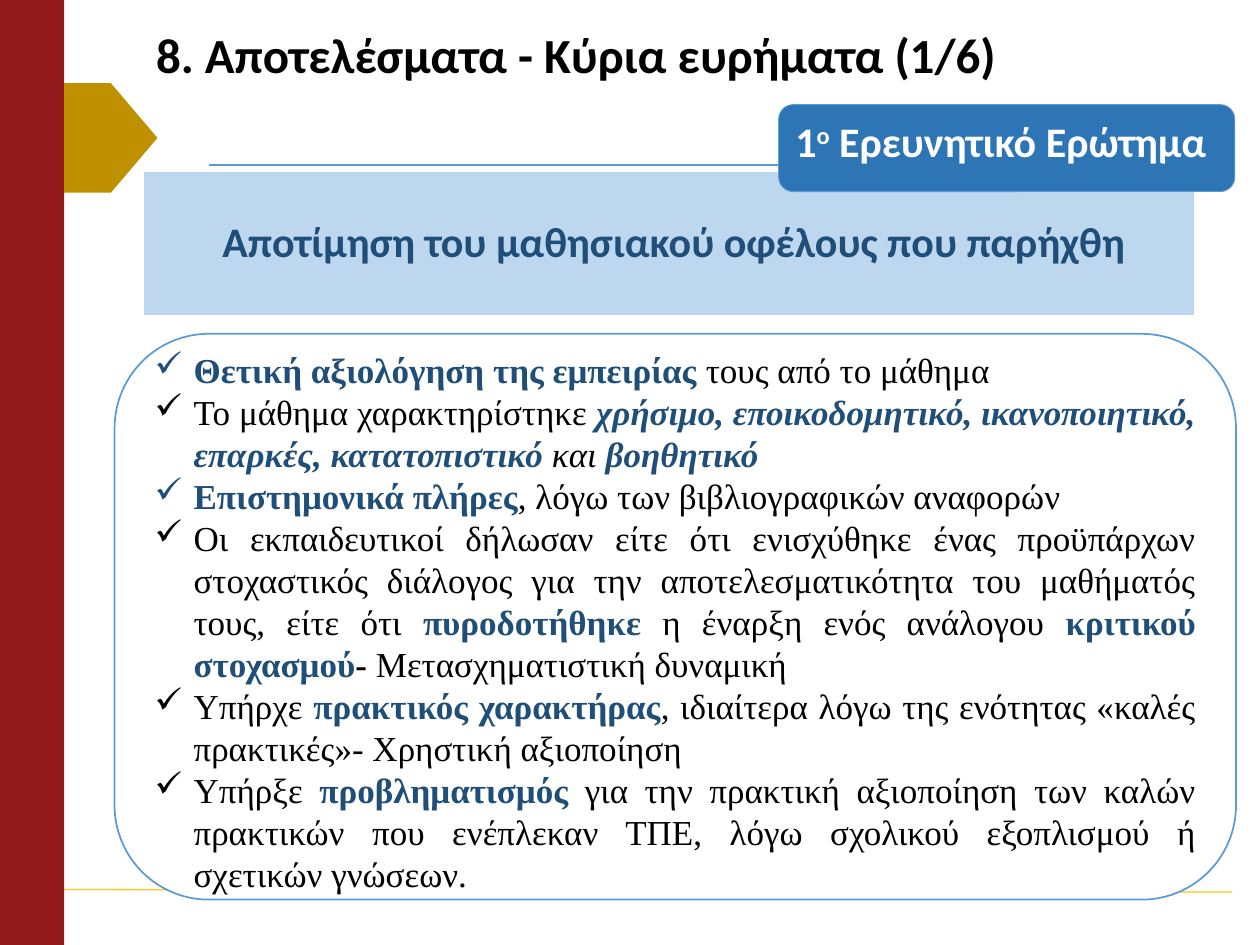
"""Build the findings slide for the first research question."""
from lxml import etree
from pptx import Presentation, util as u
from pptx.dml.color import RGBColor
from pptx.enum import shapes, text
from pptx.oxml.ns import qn

RED = RGBColor(0x93, 0x1B, 0x1B)
OCHRE = RGBColor(0xBF, 0x90, 0x00)
GOLD = RGBColor(0xFF, 0xC6, 0x1A)
SKY = RGBColor(0x5B, 0x9B, 0xD5)
PALE = RGBColor(0xBD, 0xD7, 0xEE)
BLUE = RGBColor(0x2E, 0x75, 0xB6)
NAVY = RGBColor(0x1F, 0x4E, 0x79)
WHITE = RGBColor(0xFF, 0xFF, 0xFF)
BLACK = RGBColor(0, 0, 0)

PLAIN = (BLACK, False, False)
BOLD = (BLACK, True, False)
SLANT = (BLACK, False, True)
KEY = (NAVY, True, False)
KEY_SLANT = (NAVY, True, True)
LIGHT = (WHITE, True, False)

TITLE = [("8. Αποτελέσματα - Κύρια ευρήματα (1/6)", BOLD)]
THEME = [(" Αποτίμηση του μαθησιακού οφέλους που παρήχθη", KEY)]
BADGE = [("1", LIGHT), ("ο", LIGHT), (" Ερευνητικό Ερώτημα", LIGHT)]
POINTS = [
    [("Θετική αξιολόγηση της εμπειρίας ", KEY), ("τους από το μάθημα", PLAIN)],
    [("Το μάθημα χαρακτηρίστηκε ", PLAIN),
     ("χρήσιμο, εποικοδομητικό, ικανοποιητικό, επαρκές, κατατοπιστικό", KEY_SLANT),
     (" και ", SLANT), ("βοηθητικό", KEY_SLANT)],
    [("Επιστημονικά πλήρες", KEY), (", λόγω των βιβλιογραφικών αναφορών", PLAIN)],
    [("Οι εκπαιδευτικοί δήλωσαν είτε ότι ενισχύθηκε ένας προϋπάρχων "
      "στοχαστικός διάλογος για την αποτελεσματικότητα του μαθήματός "
      "τους, είτε ότι ", PLAIN),
     ("πυροδοτήθηκε", KEY), (" η έναρξη ενός ανάλογου ", PLAIN),
     ("κριτικού στοχασμού", KEY), ("- ", BOLD),
     ("Μετασχηματιστική δυναμική", PLAIN)],
    [("Υπήρχε ", PLAIN), ("πρακτικός χαρακτήρας", KEY),
     (", ιδιαίτερα λόγω της ενότητας «καλές πρακτικές»- "
      "Χρηστική αξιοποίηση", PLAIN)],
    [("Υπήρξε ", PLAIN), ("προβληματισμός", KEY),
     (" για την πρακτική αξιοποίηση των καλών πρακτικών που ενέπλεκαν "
      "ΤΠΕ, λόγω σχολικού εξοπλισμού ή σχετικών γνώσεων.", PLAIN)],
]

deck = Presentation()
deck.slide_width, deck.slide_height = u.Inches(10), u.Inches(7.5)
slide = deck.slides.add_slide(deck.slide_layouts[6])
KIND = shapes.MSO_SHAPE
ALIGN = text.PP_ALIGN
ANCHOR = text.MSO_ANCHOR


def place(x, y, w, h):
    """Turn percent shares of the slide into lengths."""
    wide, high = deck.slide_width / 100, deck.slide_height / 100
    return [int(v * size) for v, size in zip((x, y, w, h), (wide, high) * 2)]


def block(kind, box, fill, line=None, width=1):
    """Add a flat filled shape."""
    shape = slide.shapes.add_shape(kind, *place(*box))
    shape.shadow.inherit = False
    shape.fill.solid()
    shape.fill.fore_color.rgb = fill
    if line is None:
        shape.line.fill.background()
    else:
        shape.line.color.rgb = line
        shape.line.width = u.Pt(width)
    return shape


def rule(ends, color):
    """Add a thin straight line."""
    line = slide.shapes.add_connector(shapes.MSO_CONNECTOR.STRAIGHT, *place(*ends))
    line.line.color.rgb = color
    line.line.width = u.Pt(0.75)
    etree.SubElement(line._element.spPr, qn("a:effectLst"))


def write(shape, paras, size, font="Calibri", align=ALIGN.LEFT,
          anchor=ANCHOR.MIDDLE, space=1.0, pad=(0.1, 0.05, 0.1, 0.05)):
    """Fill a shape with paragraphs of styled runs."""
    frame = shape.text_frame
    frame.word_wrap = True
    frame.vertical_anchor = anchor
    (frame.margin_left, frame.margin_top,
     frame.margin_right, frame.margin_bottom) = map(u.Inches, pad)
    for i, runs in enumerate(paras):
        para = frame.add_paragraph() if i else frame.paragraphs[0]
        para.alignment, para.line_spacing = align, space
        for words, (color, bold, slant) in runs:
            run = para.add_run()
            run.text = words
            face = run.font
            face.name, face.size = font, u.Pt(size)
            face.bold, face.italic = bold, slant
            face.color.rgb = color
    return frame


def tick(para):
    """Give a paragraph a hanging tick mark."""
    props = para._p.get_or_add_pPr()
    props.set("marL", str(u.Inches(0.31)))
    props.set("indent", str(-u.Inches(0.31)))
    etree.SubElement(props, qn("a:buChar")).set("char", "✓")


block(KIND.RECTANGLE, (0, 0, 5.1, 100), RED)
rule((16.6, 17.47, 93.6, 17.47), SKY)
rule((5.1, 94.13, 97.8, 94.4), GOLD)
block(KIND.PENTAGON, (5.1, 8.8, 7.4, 11.6), OCHRE)

head = slide.shapes.add_textbox(*place(11.4, 4.8, 85, 8.4))
write(head, [TITLE], 28, space=0.9, pad=(0.1, 0, 0.1, 0.43))

band = block(KIND.RECTANGLE, (11.4, 18.13, 83.4, 15.33), PALE, WHITE)
write(band, [THEME], 24, align=ALIGN.CENTER, space=0.9, pad=(0.02,) * 4)

badge = block(KIND.ROUNDED_RECTANGLE, (61.8, 11.07, 36.2, 9.2), BLUE, SKY, 0.5)
label = write(badge, [BADGE], 24, anchor=ANCHOR.TOP)
label.paragraphs[0].runs[1].font._element.set("baseline", "30000")

panel = block(KIND.ROUNDED_RECTANGLE, (9.1, 35.33, 89, 59.87), WHITE, SKY)
body = write(panel, POINTS, 20, "Times New Roman", ALIGN.JUSTIFY,
             pad=(0.1, 0.13, 0.1, 0.05))
for para in body.paragraphs:
    tick(para)

deck.save("out.pptx")
